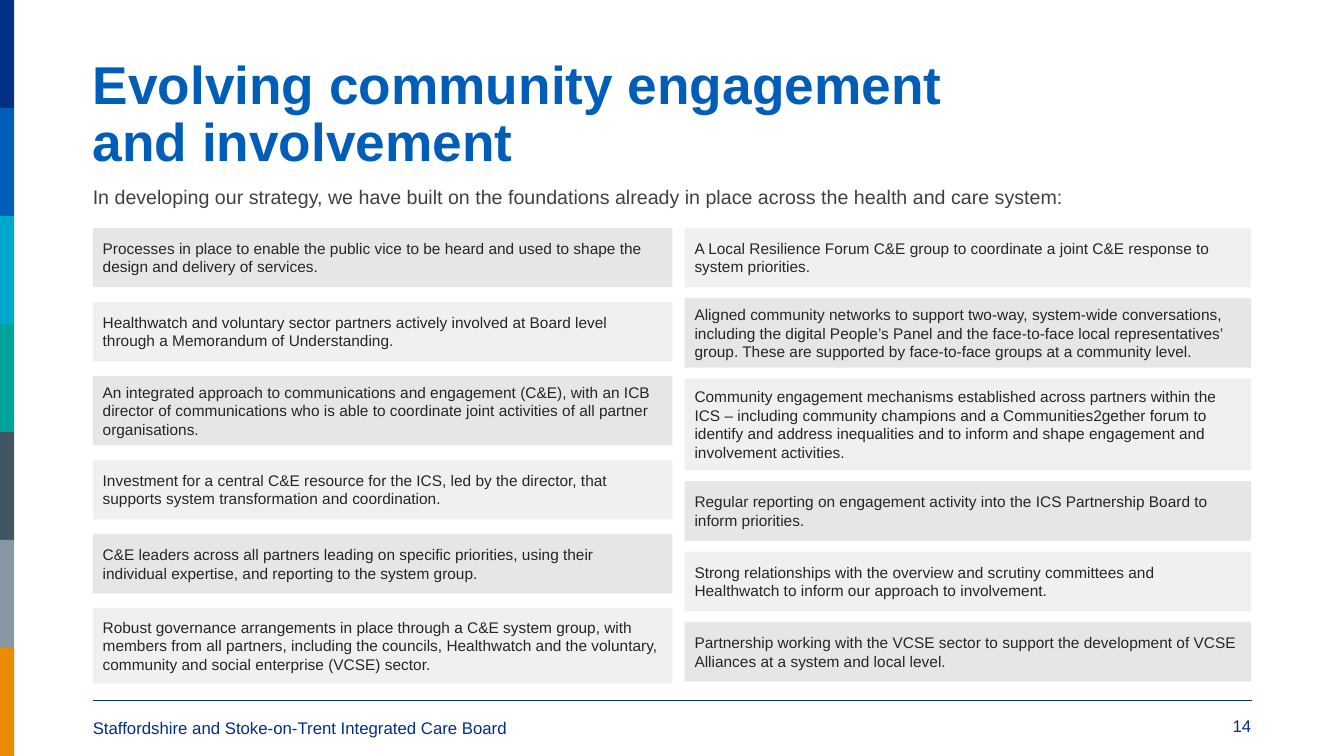
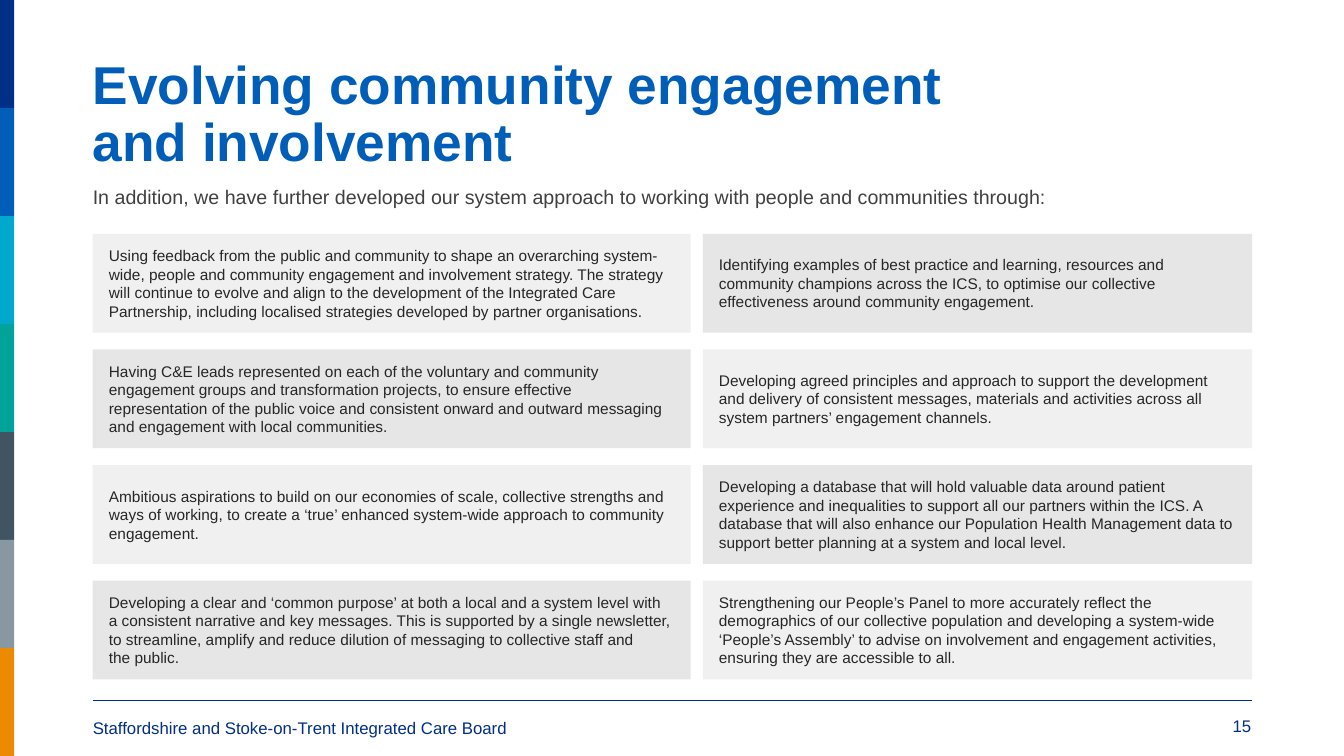
"""Build two slides on community engagement and involvement."""
from dataclasses import dataclass
from itertools import cycle
from typing import Any

from lxml.etree import SubElement as Sub
from pptx import Presentation
from pptx.dml.color import RGBColor
from pptx.enum.shapes import MSO_CONNECTOR as Link, MSO_SHAPE as Kind
from pptx.enum.text import MSO_ANCHOR as Anchor, MSO_AUTO_SIZE as Fit, PP_ALIGN as Align
from pptx.oxml.ns import qn
from pptx.util import Emu, Pt

SCALE = 9144
WIDE, HIGH = 1333, 750
LEFT, RIGHT = 92, 1242
NAVY, BLUE, GREY = "002F86", "005EB8", "E7E6E6"
BANDS = [NAVY, BLUE, "00A8CE", "00A399", "415462", "8898A3", "EC8A00"]
TITLE = "Evolving community engagement and involvement"
BOARD = "Staffordshire and Stoke-on-Trent Integrated Care Board"


@dataclass
class Style:
    size: int
    color: str
    bold: bool = False
    line: float = 1.0
    align: Any = Align.LEFT
    anchor: Any = Anchor.TOP
    pads: tuple[int, int, int, int] = (0, 0, 0, 0)


@dataclass
class Item:
    text: str
    high: int


@dataclass
class Column:
    left: int
    wide: int
    top: int
    end: int
    pad: int
    solid: bool
    items: list[Item]


@dataclass
class Page:
    number: int
    intro: str
    columns: list[Column]


HEAD = Style(38, BLUE, bold=True, line=0.9, anchor=Anchor.MIDDLE)
INTRO = Style(14, "404040", line=0.98)
FOOT = Style(12, NAVY, pads=(0, 5, 10, 5))
COUNT = Style(12, NAVY, align=Align.RIGHT, pads=(0, 5, 0, 5))

PAGES = [
    Page(14, "In developing our strategy, we have built on the foundations already in place "
         "across the health and care system:", [
             Column(92, 575, 226, 678, 10, True, [
                 Item("Processes in place to enable the public vice to be heard and used to "
                      "shape the design and delivery of services.", 59),
                 Item("Healthwatch and voluntary sector partners actively involved at Board "
                      "level through a Memorandum of Understanding.", 59),
                 Item("An integrated approach to communications and engagement (C&E), with an "
                      "ICB director of communications who is able to coordinate joint "
                      "activities of all partner organisations.", 69),
                 Item("Investment for a central C&E resource for the ICS, led by the director, "
                      "that supports system transformation and coordination.", 59),
                 Item("C&E leaders across all partners leading on specific priorities, using "
                      "their individual expertise, and reporting to the system group.", 59),
                 Item("Robust governance arrangements in place through a C&E system group, "
                      "with members from all partners, including the councils, Healthwatch "
                      "and the voluntary, community and social enterprise (VCSE) sector.", 75),
             ]),
             Column(679, 562, 226, 676, 10, False, [
                 Item("A Local Resilience Forum C&E group to coordinate a joint C&E response "
                      "to system priorities.", 59),
                 Item("Aligned community networks to support two-way, system-wide "
                      "conversations, including the digital People’s Panel and the "
                      "face-to-face local representatives’ group. These are supported by "
                      "face-to-face groups at a community level.", 69),
                 Item("Community engagement mechanisms established across partners within "
                      "the ICS – including community champions and a Communities2gether "
                      "forum to identify and address inequalities and to inform and shape "
                      "engagement and involvement activities.", 91),
                 Item("Regular reporting on engagement activity into the ICS Partnership "
                      "Board to inform priorities.", 59),
                 Item("Strong relationships with the overview and scrutiny committees and "
                      "Healthwatch to inform our approach to involvement.", 59),
                 Item("Partnership working with the VCSE sector to support the development "
                      "of VCSE Alliances at a system and local level.", 59),
             ]),
         ]),
    Page(15, "In addition, we have further developed our system approach to working with "
         "people and communities through:", [
             Column(92, 593, 232, 674, 16, False, [
                 Item("Using feedback from the public and community to shape an overarching "
                      "system-wide, people and community engagement and involvement strategy. "
                      "The strategy will continue to evolve and align to the development of "
                      "the Integrated Care Partnership, including localised strategies "
                      "developed by partner organisations.", 98),
                 Item("Having C&E leads represented on each of the voluntary and community "
                      "engagement groups and transformation projects, to ensure effective "
                      "representation of the public voice and consistent onward and outward "
                      "messaging and engagement with local communities.", 98),
                 Item("Ambitious aspirations to build on our economies of scale, collective "
                      "strengths and ways of working, to create a ‘true’ enhanced system-wide "
                      "approach to community engagement.", 98),
                 Item("Developing a clear and ‘common purpose’ at both a local and a system "
                      "level with\na consistent narrative and key messages. This is supported "
                      "by a single newsletter, to streamline, amplify and reduce dilution of "
                      "messaging to collective staff and\nthe public.", 98),
             ]),
             Column(697, 545, 232, 674, 16, True, [
                 Item("Identifying examples of best practice and learning, resources and "
                      "community champions across the ICS, to optimise our collective "
                      "effectiveness around community engagement.", 98),
                 Item("Developing agreed principles and approach to support the development "
                      "and delivery of consistent messages, materials and activities across "
                      "all system partners’ engagement channels.", 98),
                 Item("Developing a database that will hold valuable data around patient "
                      "experience and inequalities to support all our partners within the "
                      "ICS. A database that will also enhance our Population Health "
                      "Management data to support better planning at a system and local "
                      "level.", 98),
                 Item("Strengthening our People’s Panel to more accurately reflect the "
                      "demographics of our collective population and developing a "
                      "system-wide ‘People’s Assembly’ to advise on involvement and "
                      "engagement activities, ensuring they are accessible to all.", 98),
             ]),
         ]),
]


def px(count: float) -> Emu:
    return Emu(round(count * SCALE))


def hue(code: str) -> RGBColor:
    return RGBColor.from_string(code)


def apply(target: Any, values: dict[str, Any]) -> None:
    for name, value in values.items():
        setattr(target, name, value)


def place(shape: Any, left: int, top: int, wide: int, high: int) -> None:
    apply(shape, {"left": px(left), "top": px(top), "width": px(wide), "height": px(high)})


def write(shape: Any, text: str, style: Style) -> None:
    frame = shape.text_frame
    sides = ("margin_left", "margin_top", "margin_right", "margin_bottom")
    apply(frame, {"word_wrap": True, "auto_size": Fit.NONE, "vertical_anchor": style.anchor})
    apply(frame, dict(zip(sides, map(px, style.pads))))
    para = frame.paragraphs[0]
    para.text = text
    apply(para, {"alignment": style.align, "line_spacing": style.line,
                 "space_before": Pt(0), "space_after": Pt(0)})
    for run in para.runs:
        apply(run.font, {"name": "Arial", "size": Pt(style.size), "bold": style.bold})
        run.font.color.rgb = hue(style.color)


def block(slide: Any, left: int, top: float, wide: int, high: float,
          color: str, alpha: int = 100) -> Any:
    shape = slide.shapes.add_shape(Kind.RECTANGLE, px(left), px(top), px(wide), px(high))
    shape.shadow.inherit = False
    shape.fill.solid()
    shape.fill.fore_color.rgb = hue(color)
    shape.line.fill.background()
    if alpha < 100:
        tone = shape.element.spPr.find(qn("a:solidFill"))[0]
        Sub(tone, qn("a:alpha"), val=str(alpha * 1000))
    return shape


def label(slide: Any, left: int, top: int, wide: int, text: str, style: Style) -> None:
    write(slide.shapes.add_textbox(px(left), px(top), px(wide), px(30)), text, style)


def frame(slide: Any) -> None:
    rule = slide.shapes.add_connector(Link.STRAIGHT, px(LEFT), px(695), px(RIGHT), px(695))
    rule.line.color.rgb = hue(NAVY)
    rule.line.width = Pt(1)
    Sub(rule.element.spPr, qn("a:effectLst"))
    step = HIGH / len(BANDS)
    bands = [block(slide, 0, i * step, 14, step, color) for i, color in enumerate(BANDS)]
    tree = slide.slide_layout.shapes.element
    for shape in (rule, *bands):
        tree.append(shape.element)


def stack(slide: Any, col: Column) -> None:
    free = col.end - col.top - sum(item.high for item in col.items)
    gap = free / (len(col.items) - 1)
    style = Style(11, "262626", anchor=Anchor.MIDDLE, pads=(col.pad, 5, col.pad, 5))
    tones = cycle((100, 60) if col.solid else (60, 100))
    top = float(col.top)
    for item, alpha in zip(col.items, tones):
        shape = block(slide, col.left, top, col.wide, item.high, GREY, alpha)
        write(shape, item.text, style)
        top += item.high + gap


def build(slide: Any, page: Page) -> None:
    title, body = slide.placeholders
    place(title, LEFT, 53, 874, 124)
    write(title, TITLE, HEAD)
    place(body, LEFT, 185, RIGHT - LEFT, 30)
    props = body.text_frame.paragraphs[0]._p.get_or_add_pPr()
    for name in ("marL", "indent"):
        props.set(name, "0")
    Sub(props, qn("a:buNone"))
    write(body, page.intro, INTRO)
    for col in page.columns:
        stack(slide, col)
    label(slide, LEFT, 707, 801, BOARD, FOOT)
    label(slide, 1042, 705, 199, str(page.number), COUNT)


def main() -> None:
    deck = Presentation()
    apply(deck, {"slide_width": px(WIDE), "slide_height": px(HIGH)})
    slides = [deck.slides.add_slide(deck.slide_layouts[1]) for _ in PAGES]
    frame(slides[0])
    for slide, page in zip(slides, PAGES):
        build(slide, page)
    deck.save("out.pptx")


if __name__ == "__main__":
    main()
